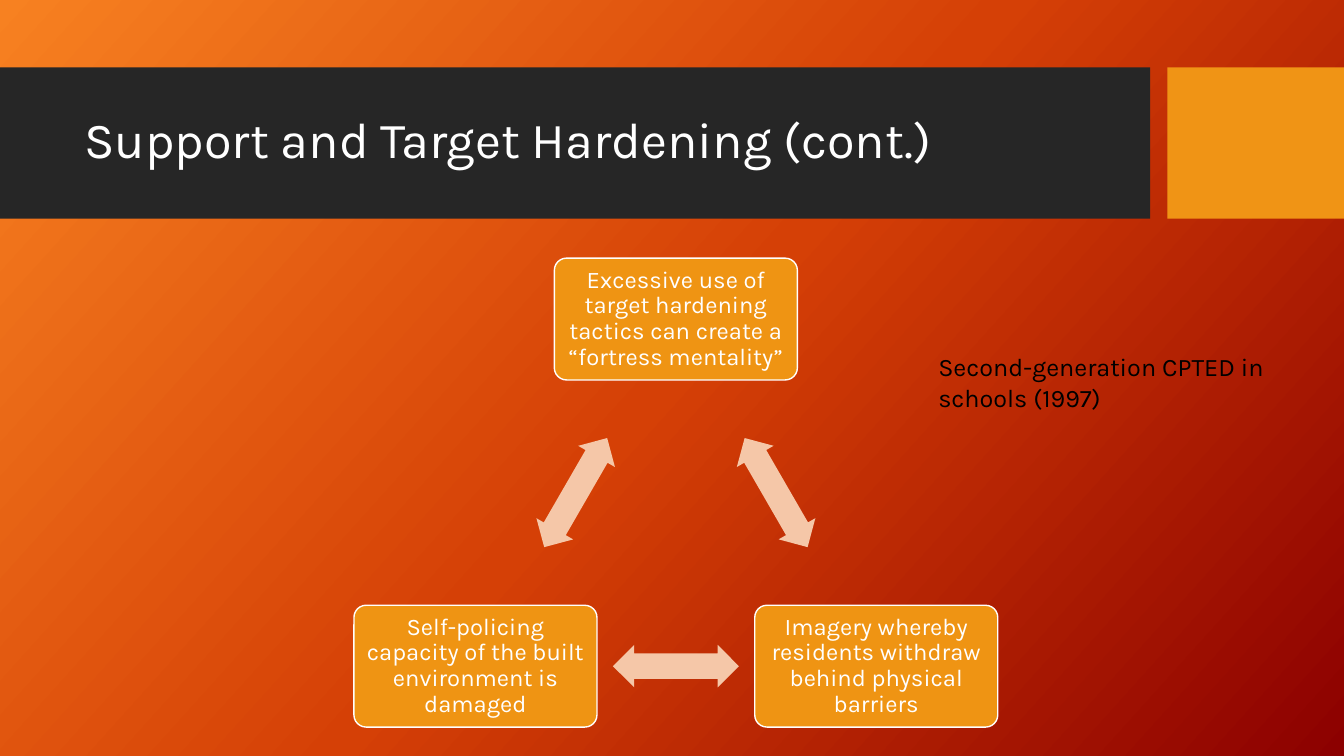
from copy import deepcopy
from math import cos, radians, sin

from pptx import Presentation
from pptx.dml.color import RGBColor
from pptx.enum import shapes, text
from pptx.oxml.ns import qn
from pptx.util import Pt

TITLE = "Support and Target Hardening (cont.)"
NOTE = "Second-generation CPTED in schools (1997)"
CYCLE = [  # clockwise from the top
    "Excessive use of target hardening tactics can create a “fortress mentality”",
    "Imagery whereby residents withdraw behind physical barriers",
    "Self-policing capacity of the built environment is damaged",
]

FONT = "Karla"
WHITE = RGBColor(0xFF, 0xFF, 0xFF)
BLACK = RGBColor(0, 0, 0)
CHARCOAL = RGBColor(0x26, 0x26, 0x26)
AMBER = RGBColor(0xF0, 0x94, 0x15)
BOX_AMBER = RGBColor(0xEF, 0x94, 0x13)
PEACH = RGBColor(0xF5, 0xC7, 0xA8)
BACKGROUND = [
    (0, RGBColor(0xF7, 0x81, 0x21)),
    (0.5, RGBColor(0xD5, 0x40, 0x06)),
    (1, RGBColor(0x8C, 0, 0)),
]

BAND_TOP, BAND_H = 48.2, 108
CENTER_X, CENTER_Y, RADIUS = 482.8, 393.2, 165.3
BOX_W, BOX_H = 173.6, 87
ARROW_W, ARROW_H = 90, 30.3

MIDDLE = text.MSO_ANCHOR.MIDDLE
KINDS = shapes.MSO_SHAPE


def paint_background(s):
    fill = s.background.fill
    fill.gradient()
    fill.gradient_angle = 360 - 42
    stops = s.element.find(".//" + qn("a:gsLst"))
    stops.append(deepcopy(stops[-1]))
    for stop, (position, color) in zip(fill.gradient_stops, BACKGROUND):
        stop.position = position
        stop.color.rgb = color


def add_shape(s, kind, x, y, w, h, color, line=None):
    sp = s.shapes.add_shape(kind, Pt(x), Pt(y), Pt(w), Pt(h))
    sp.shadow.inherit = False
    sp.fill.solid()
    sp.fill.fore_color.rgb = color
    if line is None:
        sp.line.fill.background()
    else:
        sp.line.color.rgb = line
        sp.line.width = Pt(1)
    return sp


def write(sp, words, size, color, inset=(7.2, 3.6), anchor=MIDDLE, **paragraph):
    tf = sp.text_frame
    side, end = map(Pt, inset)
    frame = dict(word_wrap=True, vertical_anchor=anchor, margin_left=side,
                 margin_right=side, margin_top=end, margin_bottom=end)
    for name, value in frame.items():
        setattr(tf, name, value)
    p = tf.paragraphs[0]
    for name, value in paragraph.items():
        setattr(p, name, value)
    r = p.add_run()
    r.text = words
    r.font.name, r.font.size, r.font.color.rgb = FONT, Pt(size), color


def add_text(s, x, y, w, h, *args, **formats):
    write(s.shapes.add_textbox(Pt(x), Pt(y), Pt(w), Pt(h)), *args, **formats)


def add_cycle(s):
    """Boxes at the corners of an equilateral triangle, arrows on its sides."""
    for i, words in enumerate(CYCLE):
        corner = radians(120 * i - 90)
        x = CENTER_X + RADIUS * cos(corner)
        y = CENTER_Y + RADIUS * sin(corner)
        box = add_shape(s, KINDS.ROUNDED_RECTANGLE, x - BOX_W / 2, y - BOX_H / 2,
                        BOX_W, BOX_H, BOX_AMBER, WHITE)
        box.adjustments[0] = 0.1
        write(box, words, 17, WHITE, inset=(5.8, 5.8),
              alignment=text.PP_ALIGN.CENTER, line_spacing=0.9)

        side = radians(120 * i - 30)
        x = CENTER_X + RADIUS / 2 * cos(side)
        y = CENTER_Y + RADIUS / 2 * sin(side)
        arrow = add_shape(s, KINDS.LEFT_RIGHT_ARROW, x - ARROW_W / 2,
                          y - ARROW_H / 2, ARROW_W, ARROW_H, PEACH)
        arrow.adjustments[0], arrow.adjustments[1] = 0.6, 0.5
        arrow.rotation = 60 + 120 * i


def main():
    prs = Presentation()
    prs.slide_width, prs.slide_height = Pt(960), Pt(540)
    s = prs.slides.add_slide(prs.slide_layouts[6])
    paint_background(s)
    add_shape(s, KINDS.RECTANGLE, 0, BAND_TOP, 821.5, BAND_H, CHARCOAL)
    add_shape(s, KINDS.RECTANGLE, 833.8, BAND_TOP, 126.2, BAND_H, AMBER)
    add_text(s, 53.3, 59, 756.7, 85, TITLE, 36, WHITE, line_spacing=0.9)
    add_cycle(s)
    add_text(s, 663.1, 247.7, 262.8, 51, NOTE, 18, BLACK,
             anchor=text.MSO_ANCHOR.TOP)
    prs.save("out.pptx")


if __name__ == "__main__":
    main()
